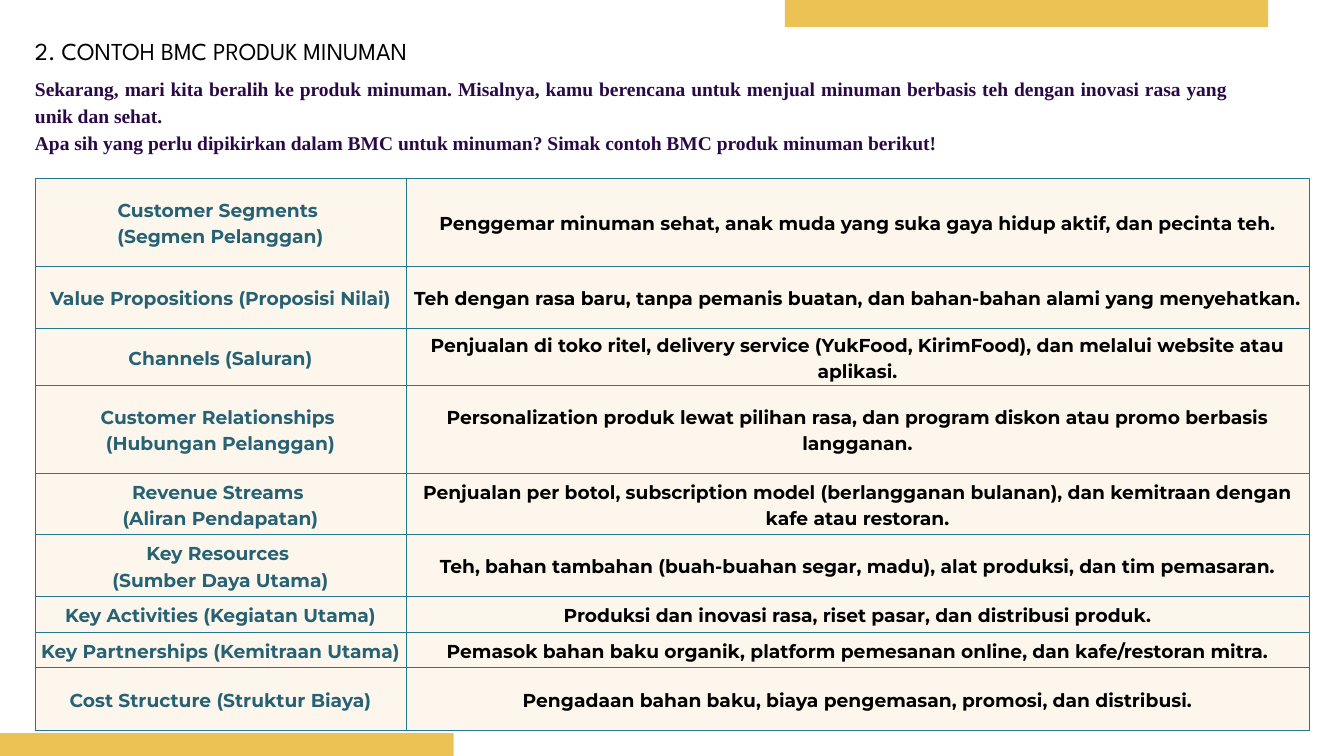
from lxml import etree
from pptx import Presentation
from pptx.dml.color import RGBColor
from pptx.enum.shapes import MSO_SHAPE
from pptx.enum.text import MSO_ANCHOR, PP_ALIGN
from pptx.oxml.ns import qn
from pptx.util import Inches, Pt

GOLD = RGBColor(0xED, 0xC2, 0x54)
CREAM = RGBColor(0xFD, 0xF6, 0xED)
TEAL = RGBColor(0x27, 0x62, 0x74)
EDGE = RGBColor(0x26, 0x77, 0x8F)
PLUM = RGBColor(0x2A, 0x09, 0x47)
BLACK = RGBColor(0, 0, 0)
RECT = MSO_SHAPE.RECTANGLE
MIDDLE = MSO_ANCHOR.MIDDLE
LEFT, CENTER, JUSTIFY = PP_ALIGN.LEFT, PP_ALIGN.CENTER, PP_ALIGN.JUSTIFY

TITLE = ["2. CONTOH BMC PRODUK MINUMAN"]
INTRO = [
    "Sekarang, mari kita beralih ke produk minuman. Misalnya, kamu berencana untuk "
    "menjual minuman berbasis teh dengan inovasi rasa yang unik dan sehat. ",
    "Apa sih yang perlu dipikirkan dalam BMC untuk minuman? "
    "Simak contoh BMC produk minuman berikut!",
]
COLS = [5.52, 13.44]
ROWS = [
    (1.3, ["Customer Segments ", "(Segmen Pelanggan)"],
     "Penggemar minuman sehat, anak muda yang suka gaya hidup aktif, dan pecinta teh."),
    (0.92, ["Value Propositions (Proposisi Nilai)"],
     "Teh dengan rasa baru, tanpa pemanis buatan, dan bahan-bahan alami yang menyehatkan."),
    (0.53, ["Channels (Saluran)"],
     "Penjualan di toko ritel, delivery service (YukFood, KirimFood), "
     "dan melalui website atau aplikasi."),
    (1.3, ["Customer Relationships ", "(Hubungan Pelanggan)"],
     "Personalization produk lewat pilihan rasa, dan program diskon "
     "atau promo berbasis langganan."),
    (0.92, ["Revenue Streams ", "(Aliran Pendapatan)"],
     "Penjualan per botol, subscription model (berlangganan bulanan), "
     "dan kemitraan dengan kafe atau restoran."),
    (0.92, ["Key Resources ", "(Sumber Daya Utama)"],
     "Teh, bahan tambahan (buah-buahan segar, madu), alat produksi, dan tim pemasaran."),
    (0.53, ["Key Activities (Kegiatan Utama)"],
     "Produksi dan inovasi rasa, riset pasar, dan distribusi produk."),
    (0.53, ["Key Partnerships (Kemitraan Utama)"],
     "Pemasok bahan baku organik, platform pemesanan online, dan kafe/restoran mitra."),
    (0.93, ["Cost Structure (Struktur Biaya)"],
     "Pengadaan bahan baku, biaya pengemasan, promosi, dan distribusi."),
]


def write(frame, lines, font, size, color, bold, align, pitch):
    for i, line in enumerate(lines):
        para = frame.paragraphs[0] if i == 0 else frame.add_paragraph()
        para.alignment = align
        para.line_spacing = Pt(pitch)
        run = para.add_run()
        run.text = line
        run.font.name = font
        run.font.size = Pt(size)
        run.font.bold = bold
        run.font.color.rgb = color


def add_bar(slide, box):
    bar = slide.shapes.add_shape(RECT, *map(Inches, box))
    bar.shadow.inherit = False
    bar.fill.solid()
    bar.fill.fore_color.rgb = GOLD
    bar.line.fill.background()


def add_text(slide, box, lines, *style):
    frame = slide.shapes.add_textbox(*map(Inches, box)).text_frame
    frame.word_wrap = True
    frame.margin_left = frame.margin_right = 0
    frame.margin_top = frame.margin_bottom = 0
    write(frame, lines, *style)


def add_edges(cell):
    props = cell._tc.get_or_add_tcPr()
    for side in ("a:lnL", "a:lnR", "a:lnT", "a:lnB"):
        line = etree.SubElement(props, qn(side), w=str(Pt(0.75)))
        fill = etree.SubElement(line, qn("a:solidFill"))
        etree.SubElement(fill, qn("a:srgbClr"), val=str(EDGE))


def fill_cell(cell, lines, color):
    cell.margin_left = cell.margin_right = Inches(0.04)
    cell.margin_top = cell.margin_bottom = Inches(0.04)
    cell.vertical_anchor = MIDDLE
    add_edges(cell)
    cell.fill.solid()
    cell.fill.fore_color.rgb = CREAM
    write(cell.text_frame, lines, "Montserrat", 20, color, True, CENTER, 28)


def add_grid(slide, box):
    table = slide.shapes.add_table(len(ROWS), len(COLS), *map(Inches, box)).table
    table.first_row = False
    table.horz_banding = False
    for col, width in zip(table.columns, COLS):
        col.width = Inches(width)
    for i, (height, label, detail) in enumerate(ROWS):
        table.rows[i].height = Inches(height)
        fill_cell(table.cell(i, 0), label, TEAL)
        fill_cell(table.cell(i, 1), [detail], BLACK)


def main():
    deck = Presentation()
    deck.slide_width = Inches(20)
    deck.slide_height = Inches(11.25)
    slide = deck.slides.add_slide(deck.slide_layouts[6])
    add_bar(slide, (-0.44, 10.91, 7.19, 0.7))
    add_bar(slide, (11.68, -0.3, 7.19, 0.7))
    add_grid(slide, (0.52, 2.66, 18.96, 7.89))
    add_text(slide, (0.52, 0.47, 7.52, 0.48), TITLE,
             "League Spartan", 26.1, BLACK, False, LEFT, 36.6)
    add_text(slide, (0.52, 1.08, 17.75, 1.61), INTRO,
             "Times New Roman", 20.9, PLUM, True, JUSTIFY, 29.3)
    deck.save("out.pptx")


if __name__ == "__main__":
    main()
